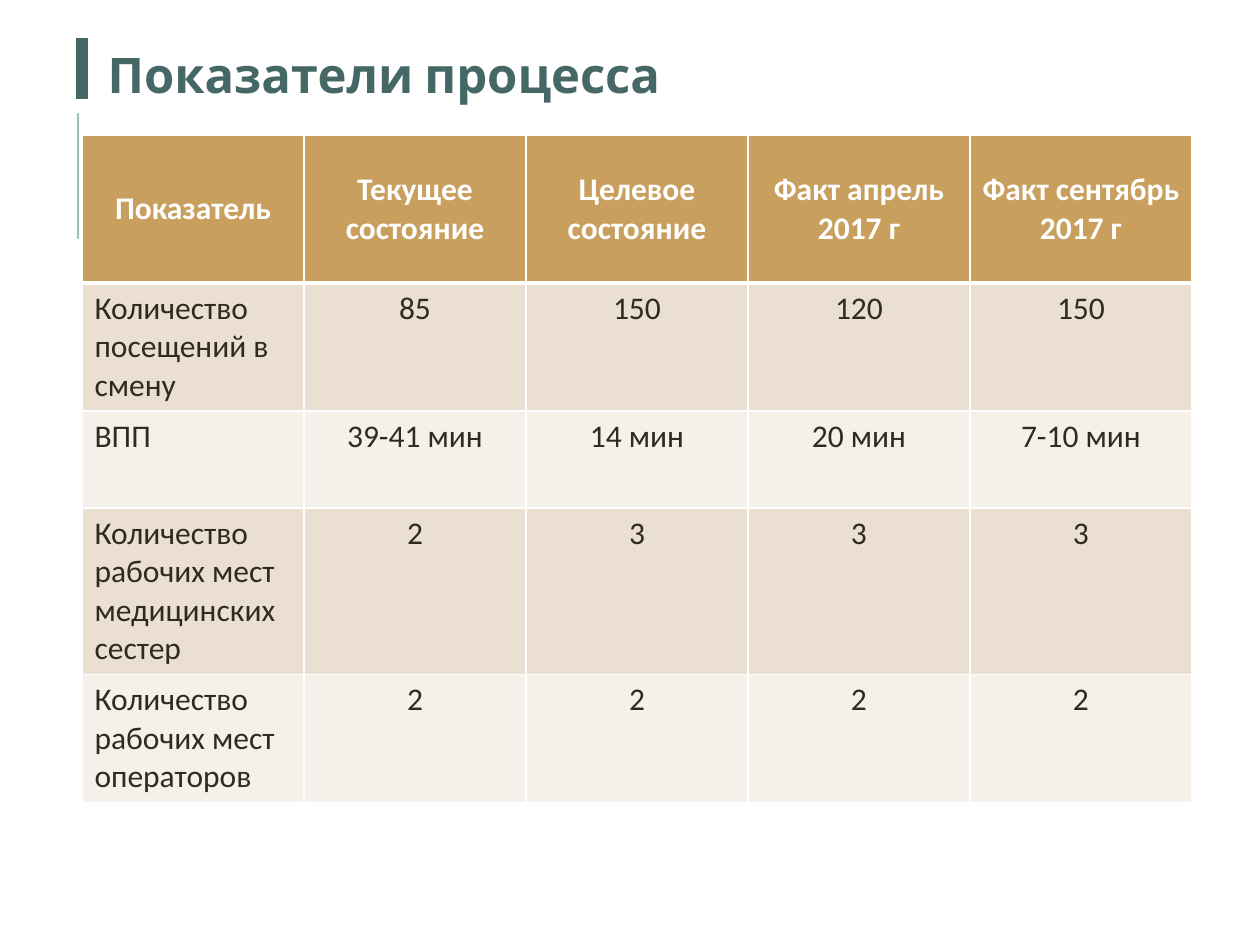
"""Build the slide of process indicators with its title and table."""
from lxml import etree
from pptx import Presentation, util as u
from pptx.dml.color import RGBColor
from pptx.enum import shapes, text
from pptx.oxml.ns import qn

HUES = {"dark": "456867", "pale": "9CBEBD", "head": "C89F5D", "odd": "EBDFD2",
        "even": "F5F0EA", "ink": "2E2B21", "white": "FFFFFF"}
COLS = [222] * 5
ROWS = [148, 128, 97, 166, 127]
DATA = [
    ["Показатель", "Текущее состояние", "Целевое состояние",
     "Факт апрель 2017 г", "Факт сентябрь 2017 г"],
    ["Количество посещений в смену", "85", "150", "120", "150"],
    ["ВПП", "39-41 мин", "14 мин", "20 мин", "7-10 мин"],
    ["Количество рабочих мест медицинских сестер", "2", "3", "3", "3"],
    ["Количество рабочих мест операторов", "2", "2", "2", "2"],
]
LINES = [(78, 239, 113, "pale", 1.5), (82, 38, 99, "dark", 6.75)]


def px(n):
    return u.Emu(round(n * 914400 / 126))


def write(para, words, font, size, hue, bold):
    run = para.add_run()
    run.text = words
    run.font.name = font
    run.font.size = u.Pt(size)
    run.font.bold = bold
    run.font.color.rgb = RGBColor.from_string(HUES[hue])


deck = Presentation()
deck.slide_width, deck.slide_height = px(1260), px(945)
slide = deck.slides.add_slide(deck.slide_layouts[5])

title = slide.shapes.title
title.left, title.top, title.width, title.height = px(95), px(38), px(1052), px(96)
frame = title.text_frame
frame.word_wrap = True
frame.auto_size = text.MSO_AUTO_SIZE.NONE
frame.vertical_anchor = text.MSO_ANCHOR.TOP
para = frame.paragraphs[0]
para.alignment = text.PP_ALIGN.LEFT
write(para, "Показатели процесса", "Cabin", 28, "dark", True)

for x, start, end, hue, width in LINES:
    line = slide.shapes.add_connector(
        shapes.MSO_CONNECTOR.STRAIGHT, px(x), px(start), px(x), px(end))
    line.line.color.rgb = RGBColor.from_string(HUES[hue])
    line.line.width = u.Pt(width)
    etree.SubElement(line._element.spPr, qn("a:effectLst"))

table = slide.shapes.add_table(len(ROWS), len(COLS), px(82), px(135),
                               px(sum(COLS)), px(sum(ROWS))).table
for col, width in zip(table.columns, COLS):
    col.width = px(width)
for r, (row, height) in enumerate(zip(DATA, ROWS)):
    table.rows[r].height = px(height)
    for c, words in enumerate(row):
        cell = table.cell(r, c)
        props = cell._tc.get_or_add_tcPr()
        for side in "LRTB":
            thick = (r, side) in [(0, "B"), (1, "T")]
            edge = etree.SubElement(props, qn("a:ln" + side), w=str(u.Pt(3 if thick else 1)))
            fill = etree.SubElement(edge, qn("a:solidFill"))
            etree.SubElement(fill, qn("a:srgbClr"), val=HUES["white"])
        cell.fill.solid()
        band = "head" if r == 0 else "odd" if r % 2 else "even"
        cell.fill.fore_color.rgb = RGBColor.from_string(HUES[band])
        cell.vertical_anchor = text.MSO_ANCHOR.TOP if r else text.MSO_ANCHOR.MIDDLE
        para = cell.text_frame.paragraphs[0]
        para.alignment = text.PP_ALIGN.LEFT if r and not c else text.PP_ALIGN.CENTER
        write(para, words, "Calibri", 18, "ink" if r else "white", r == 0)

deck.save("out.pptx")
